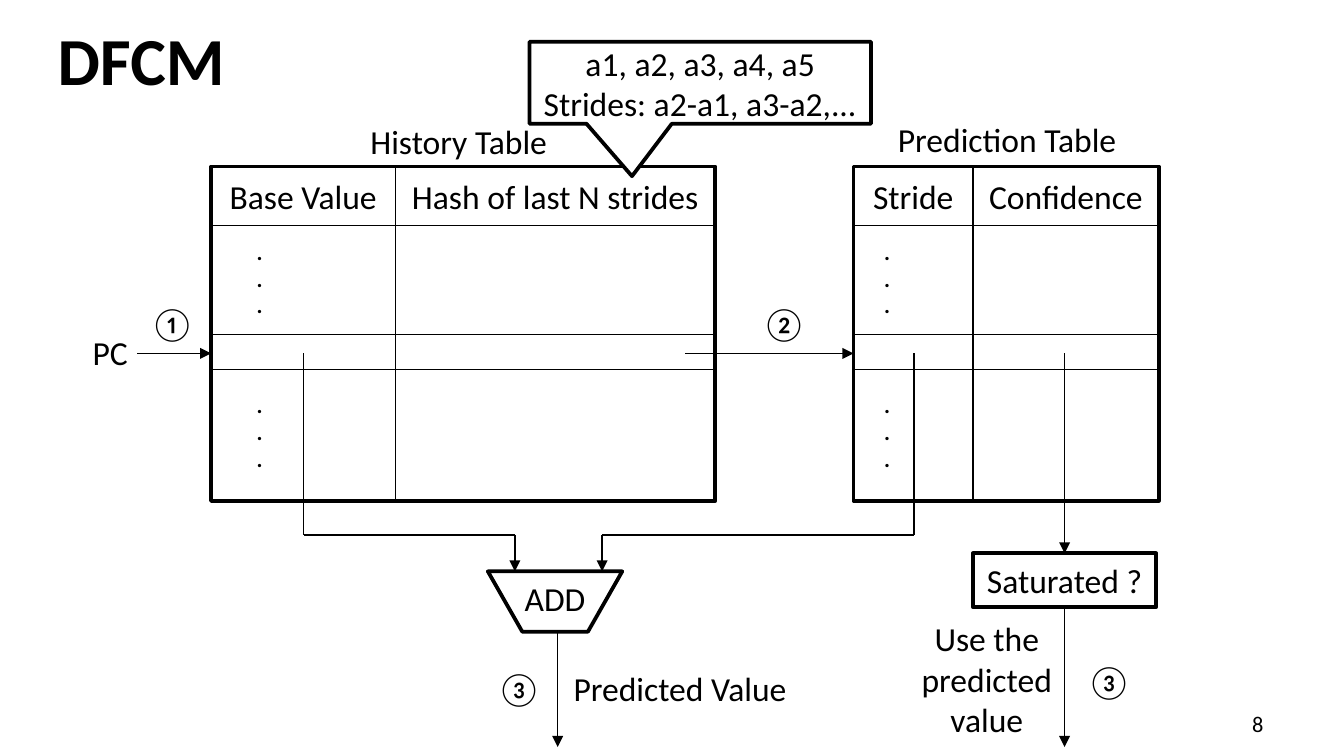
from lxml.etree import SubElement
from pptx import Presentation
from pptx.dml.color import RGBColor
from pptx.enum.shapes import MSO_CONNECTOR, MSO_SHAPE
from pptx.enum.text import MSO_ANCHOR, PP_ALIGN
from pptx.oxml.ns import qn
from pptx.util import Cm, Pt

INK = {"black": "000000", "white": "FFFFFF"}
FONT = "Calibri"
TOP, HEAD, ROW, NEXT, END = 3.15, 4.26, 6.32, 6.99, 9.47
MID = 6.68  # height at which the selected row is read
BUS = 10.11  # height of the wires that lead to the adder


def color(name):
    return RGBColor.from_string(INK[name])


def write(frame, text, size=18, bold=False, align=PP_ALIGN.CENTER):
    frame.text = text
    frame.word_wrap = True
    for para in frame.paragraphs:
        para.alignment = align
        for run in para.runs:
            font = run.font
            font.name, font.size, font.bold = FONT, Pt(size), bold
            font.color.rgb = color("black")


def label(slide, text, x, y, w, h=1.02, middle=False, **style):
    frame = slide.shapes.add_textbox(Cm(x), Cm(y), Cm(w), Cm(h)).text_frame
    write(frame, text, **style)
    if middle:
        frame.vertical_anchor = MSO_ANCHOR.MIDDLE


def box(slide, kind, x, y, w, h, text="", fill=True):
    shape = slide.shapes.add_shape(kind, Cm(x), Cm(y), Cm(w), Cm(h))
    shape.shadow.inherit = False
    if fill:
        shape.fill.solid()
        shape.fill.fore_color.rgb = color("white")
    else:
        shape.fill.background()
    shape.line.color.rgb = color("black")
    shape.line.width = Pt(2)
    if text:
        frame = shape.text_frame
        write(frame, text)
        frame.margin_left = frame.margin_right = Cm(0.1)
        frame.vertical_anchor = MSO_ANCHOR.MIDDLE
    return shape


def line(slide, start, end, arrow=False):
    link = slide.shapes.add_connector(
        MSO_CONNECTOR.STRAIGHT, *(Cm(n) for n in (*start, *end)))
    link.line.color.rgb = color("black")
    link.line.width = Pt(0.75)
    if arrow:
        SubElement(link.line._get_or_add_ln(), qn("a:tailEnd"), type="triangle")
    SubElement(link._element.spPr, qn("a:effectLst"))
    return link


def wire(slide, *points):
    """Draw a bent line through the points, with an arrowhead at the last."""
    for start, end in zip(points, points[1:]):
        line(slide, start, end, arrow=end is points[-1])


def grid(slide, left, split, right, heads, dots):
    """Draw a two-column lookup table with one row picked out."""
    box(slide, MSO_SHAPE.RECTANGLE, left, TOP, right - left, END - TOP)
    for y in (HEAD, ROW, NEXT):
        line(slide, (left, y), (right, y))
    line(slide, (split, TOP), (split, END))
    for text, x, stop in zip(heads, (left, split), (split, right)):
        label(slide, text, x, 3.2, stop - x)
    for y in (4.37, 7.27):
        label(slide, ".\n.\n.", dots, y, 0.6, 1.8,
              size=12, bold=True, align=PP_ALIGN.LEFT)


def adder(slide):
    shape = box(slide, MSO_SHAPE.TRAPEZOID, 9.22, 10.8, 2.54, 1.14, fill=False)
    shape.rotation = 180
    shape.adjustments[0] = 0.57
    label(slide, "ADD", 9.22, 10.8, 2.54)
    for x, port in ((5.74, 9.73), (17.27, 11.38)):
        wire(slide, (x, MID), (x, BUS), (port, BUS), (port, 10.8))
    wire(slide, (10.54, 11.94), (10.54, 14.12))
    label(slide, "Predicted Value", 10.59, 12.5, 4.6, align=PP_ALIGN.LEFT)


def check(slide):
    shape = box(slide, MSO_SHAPE.RECTANGLE, 18.39, 10.46, 3.46, 1.02,
                "Saturated ?")
    x = 20.12
    line(slide, (x, MID), (x, 10.46), arrow=True).end_connect(shape, 0)
    line(slide, (x, 11.48), (x, 14.12), arrow=True).begin_connect(shape, 2)
    label(slide, "Use the predicted value", 17.15, 11.56, 3, 2.57)


def main():
    deck = Presentation()
    deck.slide_width, deck.slide_height = Cm(25.4), Cm(14.29)
    slide = deck.slides.add_slide(deck.slide_layouts[6])

    label(slide, "DFCM", 0.84, 0.15, 23.7, 1.9, middle=True,
          size=36, bold=True, align=PP_ALIGN.LEFT)
    label(slide, "8", 18.21, 13.34, 5.92, 0.66, middle=True,
          size=12, align=PP_ALIGN.RIGHT)

    label(slide, "History Table", 6.5, 2.16, 4.34)
    grid(slide, 3.99, 7.47, 13.52,
         ("Base Value", "Hash of last N strides"), 4.6)
    label(slide, "Prediction Table", 16.56, 2.13, 4.95)
    grid(slide, 16.13, 18.39, 21.9, ("Stride", "Confidence"), 16.46)

    label(slide, "PC", 1.5, 6.15, 1.4, align=PP_ALIGN.LEFT)
    wire(slide, (2.59, MID), (3.99, MID))
    wire(slide, (12.95, MID), (16.13, MID))
    adder(slide)
    check(slide)
    for step, x, y in (("①", 2.59, 5.61), ("②", 14.15, 5.61),
                       ("③", 9.14, 12.5), ("③", 20.29, 12.37)):
        label(slide, step, x, y, 1.37, align=PP_ALIGN.LEFT)

    note = box(slide, MSO_SHAPE.RECTANGULAR_CALLOUT, 10.01, 0.79, 6.45, 1.55,
               "a1, a2, a3, a4, a5\nStrides: a2-a1, a3-a2,...")
    note.adjustments[0], note.adjustments[1] = -0.2, 1.14
    deck.save("out.pptx")


if __name__ == "__main__":
    main()
